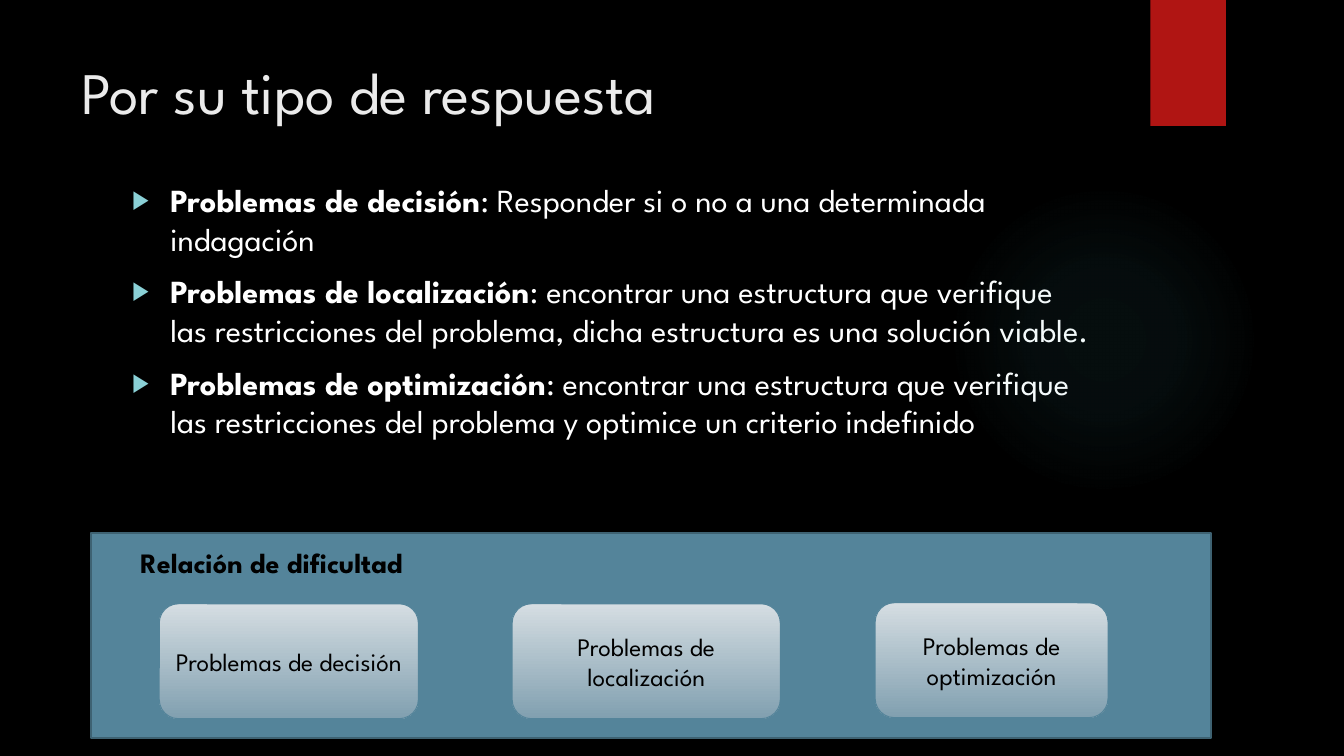
from dataclasses import dataclass

from lxml import etree
from pptx import Presentation
from pptx.dml.color import RGBColor
from pptx.enum import shapes, text
from pptx.oxml import ns, parse_xml
from pptx.util import Inches, Pt

FONT = "League Spartan"
BLACK = RGBColor(0x00, 0x00, 0x00)
WHITE = RGBColor(0xFF, 0xFF, 0xFF)
TITLE_GRAY = RGBColor(0xEB, 0xEB, 0xEB)
RED = RGBColor(0xB0, 0x15, 0x13)
STEEL = RGBColor(0x54, 0x84, 0x9A)
STEEL_DARK = RGBColor(0x3E, 0x62, 0x72)
CARD_TOP = RGBColor(0xD5, 0xDD, 0xE2)
CARD_BOTTOM = RGBColor(0x81, 0xA0, 0xB0)
BULLET = RGBColor(0x8A, 0xD0, 0xD6)
GLOW = RGBColor(0x50, 0xB9, 0xC1)
GLOW_STOPS = ((0, 7), (36, 6), (69, 0))


@dataclass
class Box:
    left: float
    top: float
    width: float
    height: float

    def lengths(self):
        return [Inches(v) for v in (self.left, self.top, self.width, self.height)]


@dataclass
class Problem:
    name: str
    meaning: str
    card: Box


PROBLEMS = [
    Problem("Problemas de decisión",
            ": Responder si o no a una determinada indagación",
            Box(1.58, 5.99, 2.57, 1.14)),
    Problem("Problemas de localización",
            ": encontrar una estructura que verifique las restricciones del "
            "problema, dicha estructura es una solución viable.",
            Box(5.08, 5.99, 2.66, 1.14)),
    Problem("Problemas de optimización",
            ": encontrar una estructura que verifique las restricciones del "
            "problema y optimice un criterio indefinido",
            Box(8.68, 5.98, 2.31, 1.14)),
]


def style(font, size: float, color: RGBColor, bold: bool = False) -> None:
    font.name = FONT
    font.size = Pt(size)
    font.bold = bold
    font.color.rgb = color


def add_shape(s, kind, box: Box):
    sp = s.shapes.add_shape(kind, *box.lengths())
    sp.shadow.inherit = False
    sp.line.fill.background()
    return sp


def set_line(sp, color: RGBColor, width: float) -> None:
    sp.line.color.rgb = color
    sp.line.width = Pt(width)


def add_panel(s, box: Box, color: RGBColor):
    sp = add_shape(s, shapes.MSO_SHAPE.RECTANGLE, box)
    sp.fill.solid()
    sp.fill.fore_color.rgb = color
    return sp


def add_glow(s, box: Box) -> None:
    sp = add_shape(s, shapes.MSO_SHAPE.OVAL, box)
    stops = "".join(
        f'<a:gs pos="{pos * 1000}"><a:srgbClr val="{GLOW}">'
        f'<a:alpha val="{alpha * 1000}"/></a:srgbClr></a:gs>'
        for pos, alpha in GLOW_STOPS)
    grad = parse_xml(
        f'<a:gradFill {ns.nsdecls("a")}><a:gsLst>{stops}</a:gsLst>'
        '<a:path path="circle"><a:fillToRect l="50000" t="50000" r="50000" '
        'b="50000"/></a:path></a:gradFill>')
    sp._element.spPr.find(ns.qn("a:prstGeom")).addnext(grad)


def write_centered(sp, words: str, size: float, bold: bool = False) -> None:
    tf = sp.text_frame
    tf.word_wrap = True
    tf.vertical_anchor = text.MSO_ANCHOR.MIDDLE
    tf.text = words
    p = tf.paragraphs[0]
    p.alignment = text.PP_ALIGN.CENTER
    style(p.runs[0].font, size, BLACK, bold)


def add_card(s, problem: Problem) -> None:
    sp = add_shape(s, shapes.MSO_SHAPE.ROUNDED_RECTANGLE, problem.card)
    sp.fill.gradient()
    sp.fill.gradient_angle = 270
    for stop, color, pos in zip(sp.fill.gradient_stops, (CARD_TOP, CARD_BOTTOM), (0, 1)):
        stop.color.rgb = color
        stop.position = pos
    set_line(sp, STEEL, 0.75)
    write_centered(sp, problem.name, 18)


def place(sp, box: Box):
    sp.left, sp.top, sp.width, sp.height = box.lengths()
    tf = sp.text_frame
    tf.word_wrap = True
    tf.auto_size = text.MSO_AUTO_SIZE.NONE
    tf.vertical_anchor = text.MSO_ANCHOR.TOP
    return tf


def add_bullet(p) -> None:
    pPr = p._p.get_or_add_pPr()
    pPr.set("marL", str(Inches(0.38)))
    pPr.set("indent", str(-Inches(0.38)))
    color = etree.SubElement(pPr, ns.qn("a:buClr"))
    etree.SubElement(color, ns.qn("a:srgbClr"), val=str(BULLET))
    etree.SubElement(pPr, ns.qn("a:buSzPct"), val="80000")
    etree.SubElement(pPr, ns.qn("a:buChar"), char="▶")


def write_problems(tf) -> None:
    for i, problem in enumerate(PROBLEMS):
        p = tf.add_paragraph() if i else tf.paragraphs[0]
        add_bullet(p)
        p.alignment = text.PP_ALIGN.LEFT
        p.space_before = Pt(10 if i else 0)
        for words, bold in ((problem.name, True), (problem.meaning, False)):
            r = p.add_run()
            r.text = words
            style(r.font, 23, WHITE, bold)


def main() -> None:
    prs = Presentation()
    prs.slide_width, prs.slide_height = Inches(13.33), Inches(7.5)
    s = prs.slides.add_slide(prs.slide_layouts[1])
    s.background.fill.solid()
    s.background.fill.fore_color.rgb = BLACK

    tf = place(s.shapes.title, Box(0.71, 0.5, 10.29, 1.53))
    tf.text = "Por su tipo de respuesta"
    tf.paragraphs[0].alignment = text.PP_ALIGN.LEFT
    style(tf.paragraphs[0].runs[0].font, 42, TITLE_GRAY)
    write_problems(place(s.placeholders[1], Box(1.21, 1.74, 9.78, 4.59)))

    add_glow(s, Box(9.41, 1.83, 3.08, 3.08))
    add_panel(s, Box(11.41, 0, 0.75, 1.25), RED)
    set_line(add_panel(s, Box(0.9, 5.29, 11.11, 2.03), STEEL), STEEL_DARK, 1.5)
    for problem in PROBLEMS:
        add_card(s, problem)
    heading = s.shapes.add_textbox(*Box(0.9, 4.92, 3.59, 1.31).lengths())
    write_centered(heading, "Relación de dificultad", 20, bold=True)
    prs.save("out.pptx")


if __name__ == "__main__":
    main()
